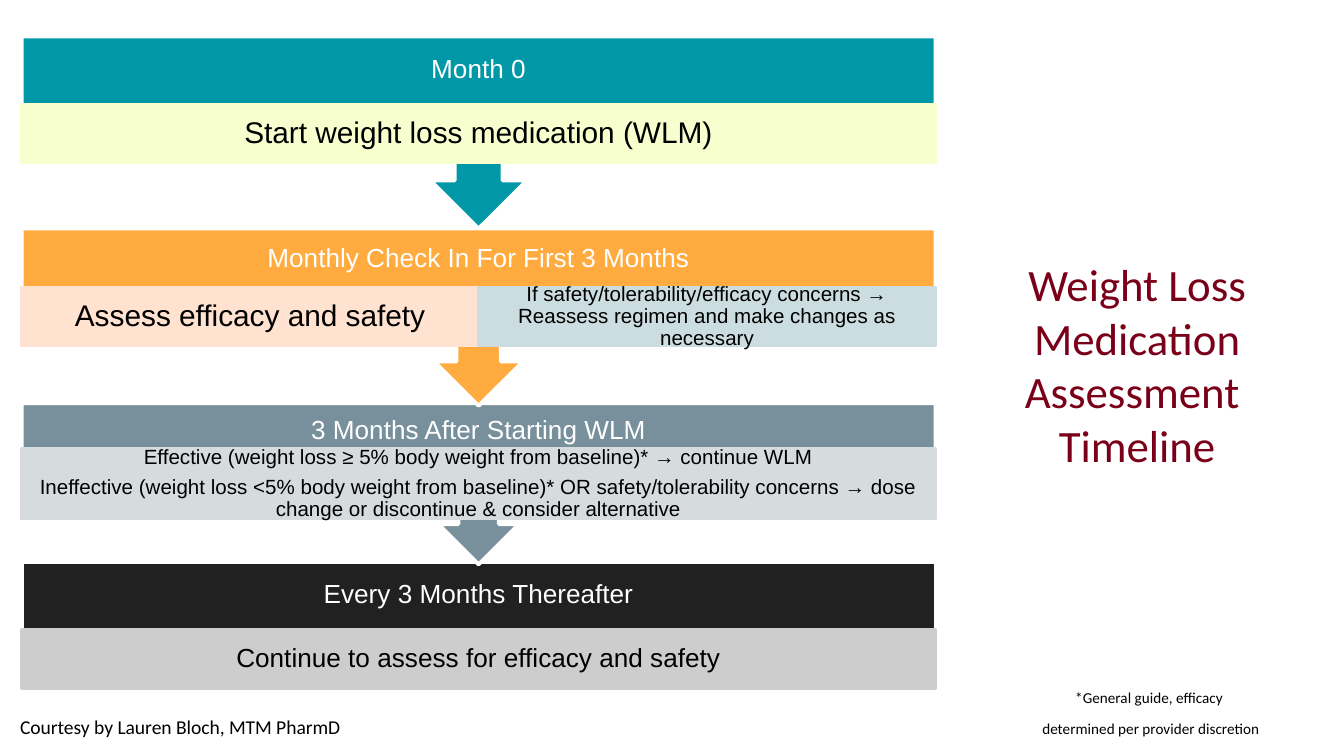
from dataclasses import dataclass

from pptx import Presentation
from pptx.dml.color import RGBColor
from pptx.enum.shapes import MSO_SHAPE
from pptx.enum.text import MSO_ANCHOR, PP_ALIGN
from pptx.util import Cm, Pt


@dataclass(frozen=True)
class Theme:
    body_font: str = "Arial"
    side_font: str = "Calibri"
    title_color: str = "7A0019"
    dark: str = "000000"
    light: str = "FFFFFF"
    title_size: float = 24
    heading_size: float = 14
    note_size: float = 14
    credit_size: float = 10.5
    outline: float = 2


@dataclass(frozen=True)
class Stage:
    top: float
    height: float
    fill: str
    heading: str
    detail_top: float
    detail_height: float
    details: tuple  # (fill, text size, paragraphs) for each column
    last: bool = False


THEME = Theme()
TIMELINE_LEFT, TIMELINE_WIDTH = 0.41, 17.27
STAGES = [
    Stage(0.69, 3.63, "0097A7", "Month 0", 1.29, 1.09,
          (("F8FFCF", 16, ["Start weight loss medication (WLM)"]),)),
    Stage(4.32, 3.35, "FFAB40", "Monthly Check In For First 3 Months", 1.12, 1.09,
          (("FFE2CF", 16, ["Assess efficacy and safety"]),
           ("CCDDE1", 11, ["If safety/tolerability/efficacy concerns → Reassess "
                           "regimen and make changes as necessary"]))),
    Stage(7.62, 3.05, "78909C", "3 Months After Starting WLM", 0.86, 1.32,
          (("D6DBDE", 11, ["Effective (weight loss ≥ 5% body weight from baseline)* "
                           "→ continue WLM",
                           "Ineffective (weight loss <5% body weight from baseline)* "
                           "OR safety/tolerability concerns → dose change or "
                           "discontinue & consider alternative"]),)),
    Stage(10.62, 2.36, "212121", "Every 3 Months Thereafter", 1.29, 1.09,
          (("CDCDCD", 14, ["Continue to assess for efficacy and safety"]),), last=True),
]


def apply_format(target, values):
    for name, value in values.items():
        setattr(target, name, value)


def add_block(slide, preset, box, fill, line):
    block = slide.shapes.add_shape(preset, *map(Cm, box))
    block.shadow.inherit = False
    block.fill.solid()
    block.fill.fore_color.rgb = RGBColor.from_string(fill)
    block.line.color.rgb = RGBColor.from_string(line)
    block.line.width = Pt(THEME.outline)
    return block


def write(frame, paragraphs, font, size, color, frame_format, paragraph_format):
    """Fill a text frame with evenly formatted paragraphs."""
    apply_format(frame, {"word_wrap": True, **frame_format})
    for index, words in enumerate(paragraphs):
        paragraph = frame.add_paragraph() if index else frame.paragraphs[0]
        paragraph.text = words
        apply_format(paragraph, paragraph_format)
        for run in paragraph.runs:
            apply_format(run.font, {"name": font, "size": Pt(size)})
            run.font.color.rgb = RGBColor.from_string(color)


def write_stage_text(frame, paragraphs, size, color, side, edge):
    margins = {"margin_left": Cm(side), "margin_right": Cm(side),
               "margin_top": Cm(edge), "margin_bottom": Cm(edge)}
    write(frame, paragraphs, THEME.body_font, size, color,
          {"vertical_anchor": MSO_ANCHOR.MIDDLE, **margins},
          {"alignment": PP_ALIGN.CENTER, "line_spacing": 0.9,
           "space_after": Pt(round(0.38 * size, 1))})


def add_stage(slide, box, stage):
    """Place a heading band, with an arrow down unless last, and its details."""
    left, top, width, height = box
    preset = MSO_SHAPE.RECTANGLE if stage.last else MSO_SHAPE.UP_ARROW_CALLOUT
    band = add_block(slide, preset, box, stage.fill, THEME.light)
    band.rotation = 0 if stage.last else 180

    heading_height = height * (0.54 if stage.last else 0.35)
    heading = slide.shapes.add_textbox(*map(Cm, (left, top, width, heading_height)))
    write_stage_text(heading.text_frame, [stage.heading], THEME.heading_size,
                     THEME.light, 0.28, 0.28)

    column = width / len(stage.details)
    for index, (fill, size, paragraphs) in enumerate(stage.details):
        cell = (left + index * column, top + stage.detail_top, column, stage.detail_height)
        detail = add_block(slide, MSO_SHAPE.RECTANGLE, cell, fill, fill)
        write_stage_text(detail.text_frame, paragraphs, size, THEME.dark,
                         0.02 * size, 0.05)


def add_title(slide, box):
    title = slide.shapes.add_textbox(*map(Cm, box))
    write(title.text_frame, ["Weight Loss Medication Assessment \vTimeline"],
          THEME.side_font, THEME.title_size, THEME.title_color,
          {"margin_top": Cm(0.25), "margin_bottom": Cm(0.25)},
          {"alignment": PP_ALIGN.CENTER})


def add_footnote(slide, box):
    """Place the raised small-print note."""
    note = slide.shapes.add_textbox(*map(Cm, box))
    write(note.text_frame,
          ["*General guide, efficacy ", "determined per provider discretion"],
          THEME.side_font, THEME.note_size, THEME.dark, {},
          {"alignment": PP_ALIGN.CENTER})
    for paragraph in note.text_frame.paragraphs:
        for run in paragraph.runs:
            run.font._element.set("baseline", "30000")


def add_credit(slide, box):
    credit = slide.shapes.add_textbox(*map(Cm, box))
    write(credit.text_frame, ["Courtesy by Lauren Bloch, MTM PharmD"],
          THEME.side_font, THEME.credit_size, THEME.dark,
          {"word_wrap": False}, {"alignment": PP_ALIGN.LEFT})


def main():
    deck = Presentation()
    apply_format(deck, {"slide_width": Cm(25.4), "slide_height": Cm(14.29)})
    slide = deck.slides.add_slide(deck.slide_layouts[6])
    add_title(slide, (18.19, 4.6, 6.6, 3.43))
    for stage in reversed(STAGES):  # each arrow overlaps the stage below it
        add_stage(slide, (TIMELINE_LEFT, stage.top, TIMELINE_WIDTH, stage.height), stage)
    add_footnote(slide, (18.59, 12.83, 6.32, 1.24))
    add_credit(slide, (0.13, 13.39, 6.68, 0.71))
    deck.save("out.pptx")


if __name__ == "__main__":
    main()
